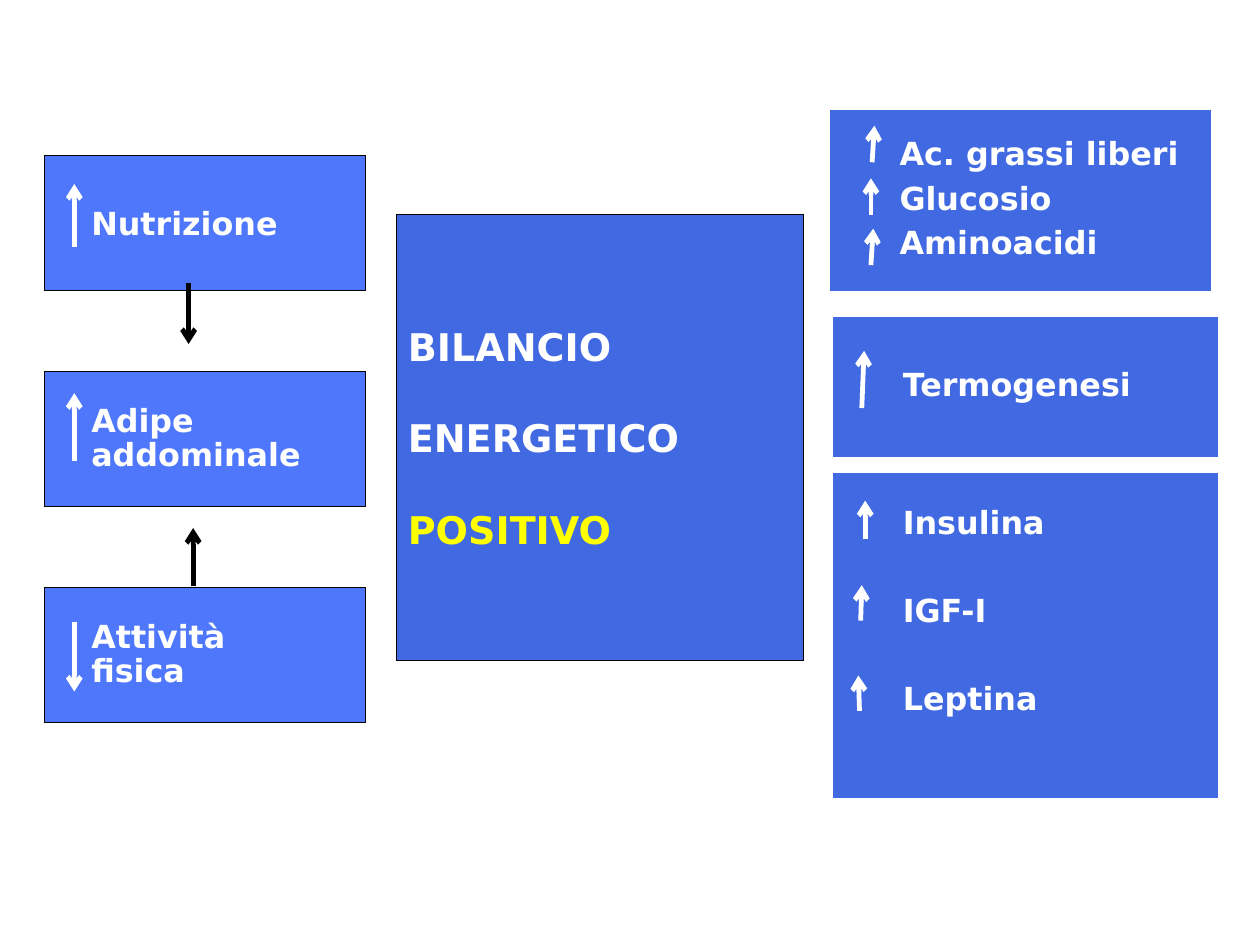
from lxml import etree
from pptx import Presentation
from pptx.dml import color
from pptx.enum import shapes, text
from pptx.oxml import ns
from pptx.util import Inches, Pt

FONT = "DejaVu Sans"
BLUE, VIVID = "4169E1", "0640FA"
WHITE, BLACK, YELLOW = "FFFFFF", "000000", "FFFF00"


def paint(fmt, code):
    """Give a solid fill its colour."""
    fmt.solid()
    fmt.fore_color.rgb = color.RGBColor.from_string(code)


def fade(shape, percent):
    """Make a solid fill partly transparent."""
    rgb = shape._element.spPr.find(ns.qn("a:solidFill"))[0]
    etree.SubElement(rgb, ns.qn("a:alpha")).set("val", str(percent * 1000))


def add_box(slide, x, y, w, h, fill, edge, width, pad=(0.1, 0.05)):
    box = slide.shapes.add_shape(shapes.MSO_SHAPE.RECTANGLE,
                                 Inches(x), Inches(y), Inches(w), Inches(h))
    box.shadow.inherit = False
    paint(box.fill, fill)
    paint(box.line.fill, edge)
    box.line.width = Pt(width)
    frame = box.text_frame
    frame.word_wrap = True
    frame.vertical_anchor = text.MSO_ANCHOR.MIDDLE
    frame.margin_left = frame.margin_right = Inches(pad[0])
    frame.margin_top = frame.margin_bottom = Inches(pad[1])
    return box


def add_run(para, words, size, code):
    run = para.add_run()
    run.text = words
    run.font.name, run.font.size, run.font.bold = FONT, Pt(size), True
    paint(run.font.fill, code)


def add_text(box, lines, size=20, indent=0, pitch=1, before=0, after=0):
    """Write (words, colour) pairs, one paragraph each."""
    frame = box.text_frame
    for i, (words, code) in enumerate(lines):
        para = frame.add_paragraph() if i else frame.paragraphs[0]
        para.alignment = text.PP_ALIGN.LEFT
        para.line_spacing = pitch
        para.space_before = Pt(before if i else 0)
        para.space_after = Pt(after)
        para._p.get_or_add_pPr().set("marL", str(Inches(indent)))
        for j, part in enumerate(words.split("\n")):
            if j:
                para.add_line_break()
            add_run(para, part, size, code)


def add_arrow(slide, x1, y1, x2, y2, code):
    """Draw an arrow that points at (x2, y2)."""
    arrow = slide.shapes.add_connector(
        shapes.MSO_CONNECTOR.STRAIGHT,
        Inches(x1), Inches(y1), Inches(x2), Inches(y2))
    paint(arrow.line.fill, code)
    arrow.line.width = Pt(3)
    tip = etree.SubElement(arrow.line._get_or_add_ln(), ns.qn("a:tailEnd"))
    tip.set("type", "arrow")
    etree.SubElement(arrow._element.spPr, ns.qn("a:effectLst"))


def add_cause(slide, row, words, pitch):
    box = add_box(slide, 0.39, 1.36 + 1.89 * row, 2.81, 1.18,
                  VIVID, BLACK, 0.75)
    fade(box, 71)
    add_text(box, [(words, WHITE)], indent=0.31, pitch=pitch)


def add_effect(slide, x, y, h, names, width=0.75, pad=(0.1, 0.05), after=7.5):
    box = add_box(slide, x, y, 3.38, h, BLUE, WHITE, width, pad)
    add_text(box, [(name, WHITE) for name in names],
             indent=0.52, pitch=0.85, after=after)
    return box


def main():
    # Page of 28 by 21 centimetres
    deck = Presentation()
    deck.slide_width = Inches(28 / 2.54)
    deck.slide_height = Inches(21 / 2.54)
    slide = deck.slides.add_slide(deck.slide_layouts[6])

    # Central balance
    core = add_box(slide, 3.47, 1.88, 3.56, 3.9, BLUE, BLACK, 0.75)
    add_text(core, [("BILANCIO", WHITE), ("ENERGETICO", WHITE),
                    ("POSITIVO", YELLOW)], size=24, before=29)

    # Causes on the left
    causes = [("Nutrizione", 1), ("Adipe\naddominale", 0.9),
              ("Attività \nfisica", 0.9)]
    for row, (words, pitch) in enumerate(causes):
        add_cause(slide, row, words, pitch)
    for start, end in [(2.16, 1.61), (4.03, 3.44), (5.44, 6.05)]:
        add_arrow(slide, 0.65, start, 0.65, end, WHITE)

    # Links between the causes
    add_arrow(slide, 1.65, 2.48, 1.65, 3.01, BLACK)
    add_arrow(slide, 1.69, 5.13, 1.69, 4.62, BLACK)

    # Effects on the right
    add_effect(slide, 7.24, 0.94, 1.63,
               ["Ac. grassi liberi", "Glucosio", "Aminoacidi"],
               width=3, pad=(0.11, 0.07))
    add_effect(slide, 7.28, 2.77, 1.23, ["Termogenesi"])
    hormones = add_effect(slide, 7.28, 4.13, 2.86,
                          ["Insulina", "IGF-I", "Leptina"], after=35)
    hormones.text_frame.margin_bottom = Inches(0.44)

    # Rising arrows beside each effect
    rises = [(7.63, 1.42, 7.65, 1.1), (7.62, 1.88, 7.62, 1.56),
             (7.62, 2.32, 7.64, 2), (7.54, 3.57, 7.56, 3.07),
             (7.57, 4.72, 7.57, 4.38), (7.53, 5.43, 7.54, 5.12),
             (7.52, 6.22, 7.51, 5.91)]
    for ends in rises:
        add_arrow(slide, *ends, WHITE)

    deck.save("out.pptx")


if __name__ == "__main__":
    main()
